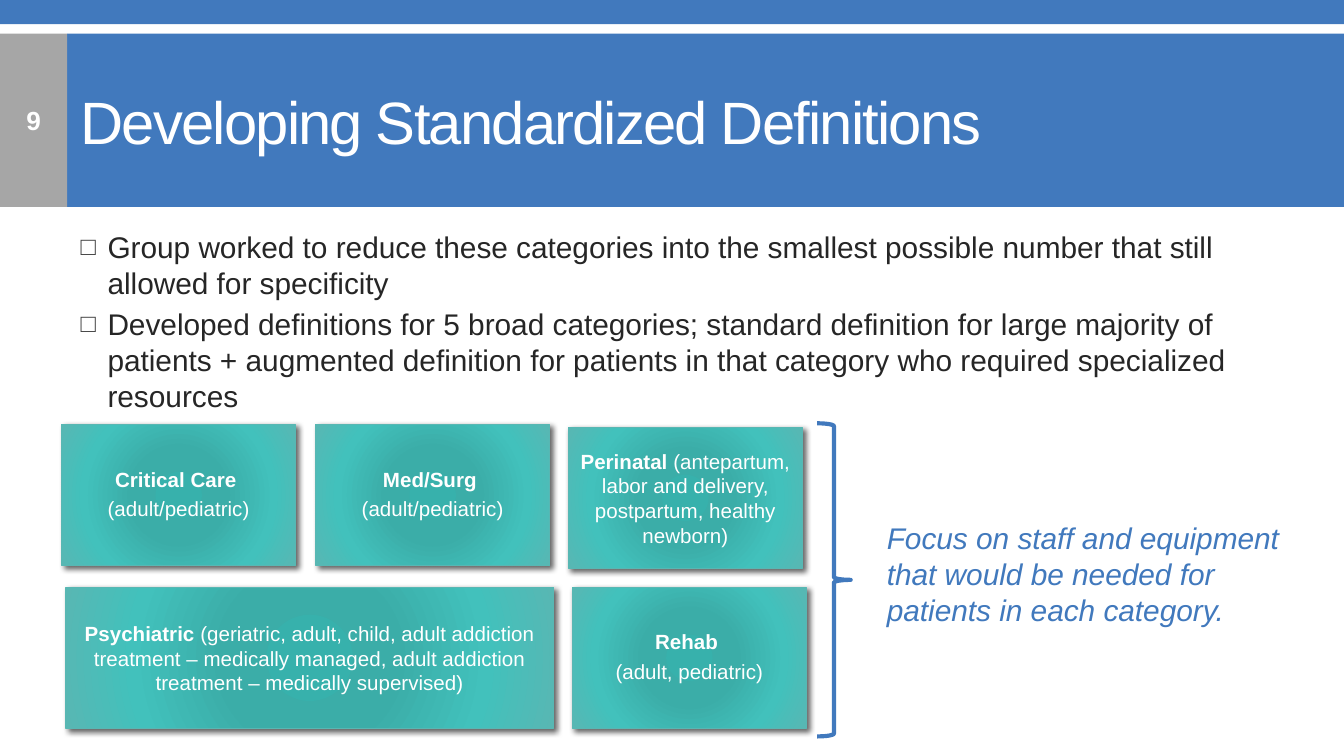
import pptx
import pptx.dml.color
import pptx.enum.shapes
import pptx.enum.text
import pptx.oxml
import pptx.oxml.ns
import pptx.util
from pptx.util import Inches

RGBColor = pptx.dml.color.RGBColor
MSO_SHAPE = pptx.enum.shapes.MSO_SHAPE
PP_ALIGN = pptx.enum.text.PP_ALIGN
ANCHOR = pptx.enum.text.MSO_ANCHOR
AUTO_SIZE = pptx.enum.text.MSO_AUTO_SIZE

BLUE = RGBColor(0x41, 0x79, 0xBD)
GREY = RGBColor(0xA6, 0xA6, 0xA6)
WHITE = RGBColor(0xFF, 0xFF, 0xFF)
INK = RGBColor(0x26, 0x26, 0x26)
BULLET = RGBColor(0x3F, 0x3F, 0x3F)
TEAL_EDGE = RGBColor(0x58, 0xB7, 0xB3)
TEAL_STOPS = [
    (0, RGBColor(0x37, 0xB1, 0xAC)),
    (34, RGBColor(0x3B, 0xAD, 0xA8)),
    (70, RGBColor(0x42, 0xC1, 0xBC)),
    (100, TEAL_EDGE),
]


def xml(body):
    """Parse a DrawingML fragment; its root tag gets the namespace."""
    tag, rest = body.split(" ", 1)
    return pptx.oxml.parse_xml(f"{tag} {pptx.oxml.ns.nsdecls('a')} {rest}")


class Deck:
    font = "Arial"

    def __init__(self, width, height):
        self.prs = pptx.Presentation()
        self.prs.slide_width = Inches(width)
        self.prs.slide_height = Inches(height)
        self.slide = self.prs.slides.add_slide(self.prs.slide_layouts[1])

    def style(self, r, size, color, bold=False, italic=False):
        r.font.name = self.font
        r.font.size = pptx.util.Pt(size)
        r.font.color.rgb = color
        r.font.bold = bold
        r.font.italic = italic

    def place(self, sp, x, y, w, h):
        sp.left, sp.top, sp.width, sp.height = map(Inches, (x, y, w, h))

    def bar(self, x, y, w, h, color):
        sp = self.slide.shapes.add_shape(
            MSO_SHAPE.RECTANGLE, *map(Inches, (x, y, w, h)))
        sp.shadow.inherit = False
        sp.fill.solid()
        sp.fill.fore_color.rgb = color
        sp.line.fill.background()
        return sp

    def number(self, sp, text):
        tf = sp.text_frame
        tf.text = text
        tf.vertical_anchor = ANCHOR.MIDDLE
        tf.paragraphs[0].alignment = PP_ALIGN.CENTER
        self.style(tf.paragraphs[0].runs[0], 14, WHITE, bold=True)

    def title(self, text, *box):
        sp = self.slide.shapes.title
        self.place(sp, *box)
        sp.fill.solid()
        sp.fill.fore_color.rgb = BLUE
        tf = sp.text_frame
        tf.text = text
        tf.auto_size = AUTO_SIZE.NONE
        tf.vertical_anchor = ANCHOR.MIDDLE
        p = tf.paragraphs[0]
        p.alignment = PP_ALIGN.LEFT
        self.style(p.runs[0], 32, WHITE)
        p.runs[0].font._element.set("spc", "-100")

    def bullets(self, items, *box):
        sp = self.slide.placeholders[1]
        self.place(sp, *box)
        tf = sp.text_frame
        tf.text = "\n".join(items)
        tf.auto_size = AUTO_SIZE.NONE
        for i, p in enumerate(tf.paragraphs):
            p.space_before = pptx.util.Pt(3.2 if i else 0)
            pPr = p._p.get_or_add_pPr()
            pPr.set("marL", str(Inches(0.2)))
            pPr.set("indent", str(-Inches(0.2)))
            pPr.append(xml(f'<a:buClr ><a:srgbClr val="{BULLET}"/></a:buClr>'))
            pPr.append(xml('<a:buSzPct val="85000"/>'))
            pPr.append(xml('<a:buChar char="□"/>'))
            self.style(p.runs[0], 16, INK)

    def note(self, text, *box):
        sp = self.slide.shapes.add_textbox(*map(Inches, box))
        tf = sp.text_frame
        tf.word_wrap = True
        tf.text = text
        self.style(tf.paragraphs[0].runs[0], 16, BLUE, italic=True)

    def brace(self, *box):
        sp = self.slide.shapes.add_shape(
            MSO_SHAPE.RIGHT_BRACE, *map(Inches, box))
        sp.shadow.inherit = False
        sp.fill.background()
        sp.line.color.rgb = BLUE
        sp.line.width = pptx.util.Pt(2.25)

    def card(self, name, detail, two_lines, *box):
        sp = self.bar(*box, TEAL_EDGE)
        sp.line.color.rgb = TEAL_EDGE
        sp.line.width = pptx.util.Pt(0.75)

        # Radial gradient and soft shadow
        spPr = sp._element.spPr
        stops = "".join(
            f'<a:gs pos="{pos * 1000}"><a:srgbClr val="{color}"/></a:gs>'
            for pos, color in TEAL_STOPS)
        solid = spPr.find(pptx.oxml.ns.qn("a:solidFill"))
        spPr.replace(solid, xml(
            f'<a:gradFill rotWithShape="1"><a:gsLst>{stops}</a:gsLst>'
            '<a:path path="circle"><a:fillToRect l="100000" t="100000" '
            'r="100000" b="100000"/></a:path></a:gradFill>'))
        spPr.find(pptx.oxml.ns.qn("a:effectLst")).append(xml(
            '<a:outerShdw blurRad="38100" dist="25400" dir="2700000" '
            'rotWithShape="0"><a:srgbClr val="000000">'
            '<a:alpha val="60000"/></a:srgbClr></a:outerShdw>'))

        # Bold name, then the detail on the same or the next line
        tf = sp.text_frame
        tf.word_wrap = True
        tf.vertical_anchor = ANCHOR.MIDDLE
        tf.margin_left = tf.margin_right = Inches(0.05)
        tf.margin_top = tf.margin_bottom = Inches(0.05)
        if two_lines:
            tf.text = f"{name} \n{detail}"
        else:
            tf.text = name
            tf.paragraphs[0].add_run().text = f" {detail}"
        for p in tf.paragraphs:
            p.alignment = PP_ALIGN.CENTER
            p.space_after = pptx.util.Pt(3.85)
            if two_lines:
                p.line_spacing = 0.9
            for r in p.runs:
                self.style(r, 11, WHITE, bold=r.text.strip() == name)


def main():
    width = 10
    deck = Deck(width, width * 9 / 16)

    # Header
    deck.bar(0, 0, width, 0.18, BLUE)
    deck.number(deck.bar(0, 0.25, 0.5, 1.29, GREY), "9")
    deck.title("Developing Standardized Definitions", 0.5, 0.25, 9.5, 1.29)

    # Main points
    deck.bullets([
        "Group worked to reduce these categories into the smallest possible "
        "number that still allowed for specificity",
        "Developed definitions for 5 broad categories; standard definition "
        "for large majority of patients + augmented definition for patients "
        "in that category who required specialized resources",
    ], 0.5, 1.65, 9, 3.23)

    # Five care categories
    small, wide, height = 1.74, 3.63, 1.05
    for name, detail, two_lines, x, y, w in [
        ("Critical Care", "(adult/pediatric)", True, 0.46, 3.16, small),
        ("Med/Surg", "(adult/pediatric)", True, 2.35, 3.16, small),
        ("Perinatal", "(antepartum, labor and delivery, postpartum, "
         "healthy newborn)", False, 4.23, 3.18, small),
        ("Psychiatric", "(geriatric, adult, child, adult addiction treatment "
         "– medically managed, adult addiction treatment – medically "
         "supervised)", False, 0.49, 4.37, wide),
        ("Rehab", "(adult, pediatric)", True, 4.26, 4.37, small),
    ]:
        deck.card(name, detail, two_lines, x, y, w, height)

    # Shared focus
    deck.brace(6.08, 3.15, 0.25, 2.33)
    deck.note("Focus on staff and equipment that would be needed for "
              "patients in each category.", 6.5, 3.82, 3.25, 0.91)

    deck.prs.save("out.pptx")


if __name__ == "__main__":
    main()
